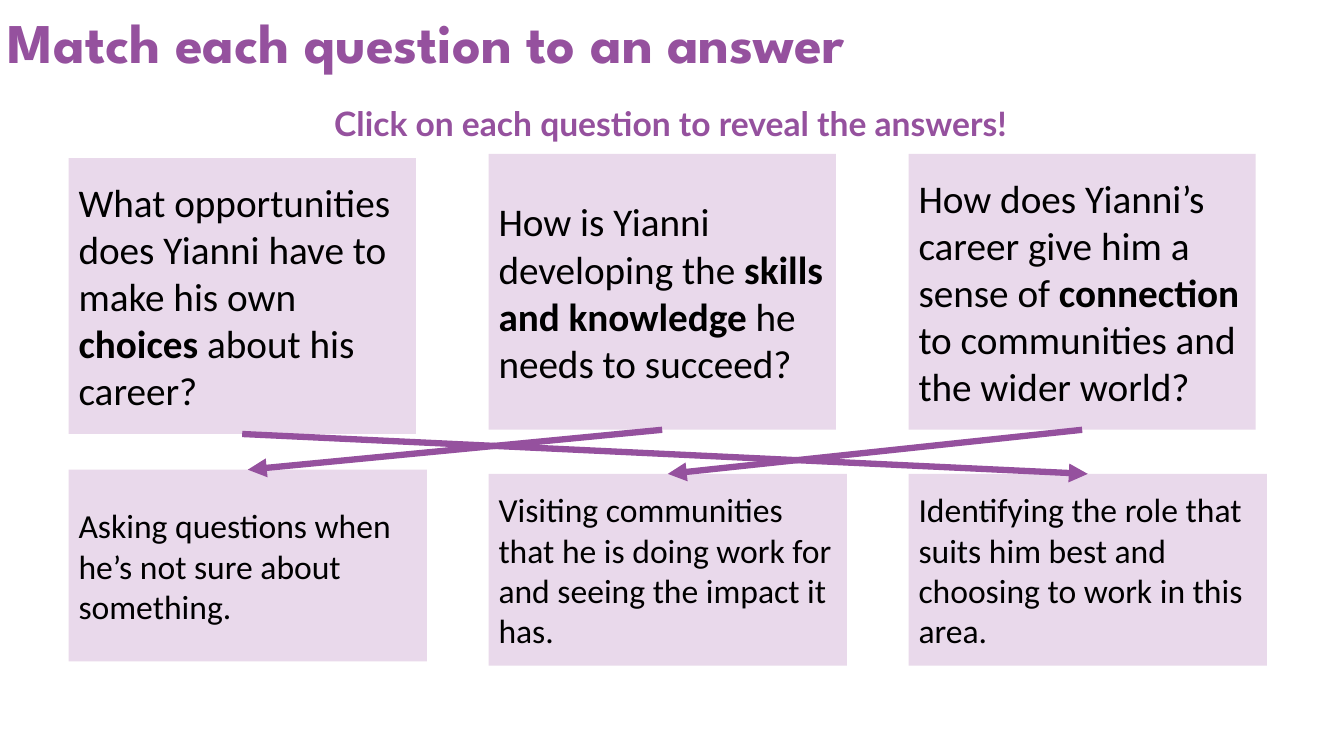
from lxml.etree import SubElement
from pptx import Presentation
from pptx.dml.color import RGBColor
from pptx.enum.shapes import MSO_CONNECTOR, MSO_SHAPE
from pptx.enum.text import MSO_ANCHOR, MSO_AUTO_SIZE, PP_ALIGN
from pptx.oxml.ns import qn
from pptx.util import Pt

PURPLE = RGBColor(0x95, 0x51, 0x9E)
LILAC = RGBColor(0xE9, 0xD9, 0xEB)
BLACK = RGBColor(0, 0, 0)

COLUMN_LEFT = 49
COLUMN_STEP = 300

QUESTIONS = [
    (113, ["What opportunities does Yianni have to make his own ", "choices", " about his career?"]),
    (110, ["How is Yianni developing the ", "skills and knowledge ", "he needs to succeed?"]),
    (110, ["How does Yianni’s career give him a sense of ", "connection",
           " to communities and the wider world?"]),
]
ANSWERS = [
    (335.5, ["Asking questions when he’s not sure about something."]),
    (338.5, ["Visiting communities that he is doing work for and seeing the impact it has."]),
    (338.5, ["Identifying the role that suits him best and choosing to work in this area."]),
]
MATCHES = [(0, 2), (1, 0), (2, 1)]


def style_heading(shape, text, font_name, size, alignment):
    frame = shape.text_frame
    frame.word_wrap = True
    frame.auto_size = MSO_AUTO_SIZE.NONE
    frame.vertical_anchor = MSO_ANCHOR.TOP
    paragraph = frame.paragraphs[0]
    paragraph.text = text
    paragraph.alignment = alignment
    paragraph.font.name = font_name
    paragraph.font.size = Pt(size)
    paragraph.font.bold = True
    paragraph.font.color.rgb = PURPLE


def add_cards(slide, cards, width, height, size):
    shapes = []
    for column, (top, texts) in enumerate(cards):
        left = COLUMN_LEFT + column * COLUMN_STEP
        shape = slide.shapes.add_shape(MSO_SHAPE.RECTANGLE, Pt(left), Pt(top), Pt(width), Pt(height))
        shape.shadow.inherit = False
        shape.fill.solid()
        shape.fill.fore_color.rgb = LILAC
        shape.line.fill.background()
        shape.text_frame.word_wrap = True
        shape.text_frame.vertical_anchor = MSO_ANCHOR.MIDDLE
        paragraph = shape.text_frame.paragraphs[0]
        paragraph.alignment = PP_ALIGN.LEFT
        paragraph.font.name = "Calibri"
        paragraph.font.size = Pt(size)
        paragraph.font.color.rgb = BLACK
        for position, text in enumerate(texts):
            run = paragraph.add_run()
            run.text = text
            run.font.bold = position == 1
        shapes.append(shape)
    return shapes


presentation = Presentation()
presentation.slide_width = Pt(960)
presentation.slide_height = Pt(540)
slide = presentation.slides.add_slide(presentation.slide_layouts[5])

title = slide.shapes.title
title.left, title.top, title.width, title.height = Pt(-1.5), Pt(1.5), Pt(961), Pt(60)
style_heading(title, "Match each question to an answer", "League Spartan", 40, PP_ALIGN.LEFT)

instruction = slide.shapes.add_textbox(Pt(-1.5), Pt(69.8), Pt(961), Pt(36))
style_heading(instruction, "Click on each question to reveal the answers!", "Lato", 24, PP_ALIGN.CENTER)

question_cards = add_cards(slide, QUESTIONS, 248, 197, 28)
answer_cards = add_cards(slide, ANSWERS, 256, 137, 24)

for question, answer in MATCHES:
    arrow = slide.shapes.add_connector(MSO_CONNECTOR.STRAIGHT, 0, 0, 0, 0)
    arrow.begin_connect(question_cards[question], 2)
    arrow.end_connect(answer_cards[answer], 0)
    arrow.line.color.rgb = PURPLE
    arrow.line.width = Pt(4.5)
    SubElement(arrow.line._get_or_add_ln(), qn("a:tailEnd"), type="triangle")
    SubElement(arrow._element.spPr, qn("a:effectLst"))

presentation.save("out.pptx")
